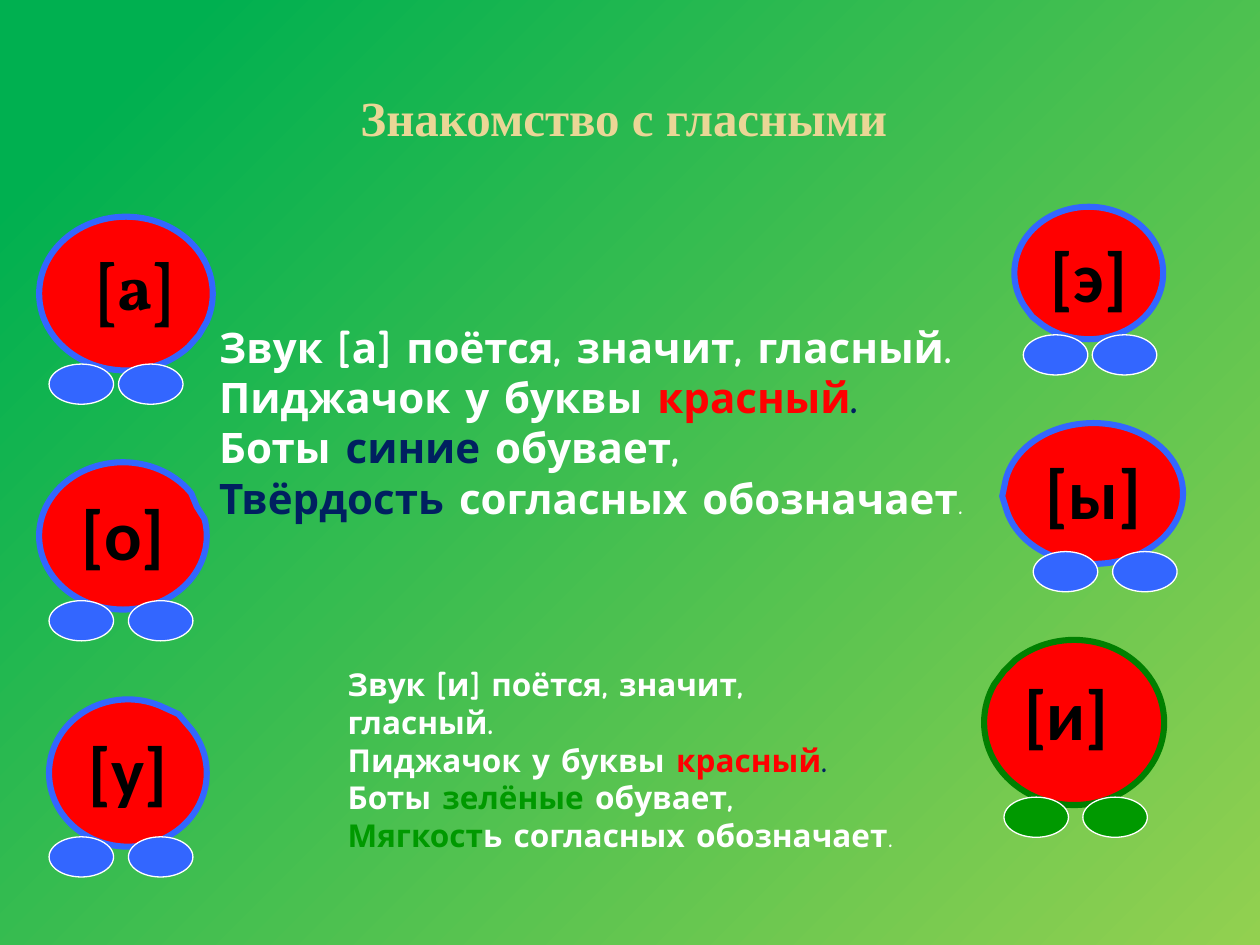
from pptx import Presentation
from pptx.dml.color import RGBColor
from pptx.enum.shapes import MSO_SHAPE as SHAPE
from pptx.enum.text import MSO_ANCHOR as ANCHOR, PP_ALIGN as ALIGN
from pptx.util import Cm, Pt

WHITE, RED, NAVY = "FFFFFF", "FF0000", "002060"
BLUE, GREEN, DARK_GREEN = "3366FF", "009900", "008000"


def rgb(code):
    return RGBColor.from_string(code)


def add_run(p, text, font, size, color, bold=True):
    r = p.add_run()
    r.text = text
    r.font.name, r.font.size, r.font.bold = font, Pt(size), bold
    r.font.color.rgb = rgb(color)


prs = Presentation()
prs.slide_width, prs.slide_height = Cm(25.4), Cm(19.05)
s = prs.slides.add_slide(prs.slide_layouts[6])

bg = s.background.fill
bg.gradient()
bg.gradient_angle = 315
for stop, pos, color in zip(bg.gradient_stops, (0.09, 1), ("00B050", "92D050")):
    stop.position = pos
    stop.color.rgb = rgb(color)

# Title
tf = s.shapes.add_textbox(Cm(1.27), Cm(0.76), Cm(22.86), Cm(3.18)).text_frame
tf.word_wrap = True
tf.vertical_anchor = ANCHOR.MIDDLE
p = tf.paragraphs[0]
p.alignment = ALIGN.CENTER
add_run(p, "Знакомство с гласными ", "Times New Roman", 28, "EAD696")

# Letters: text, font, size, box in cm, callout tip, outline,
# boot colour, x of both boots, y of boots
letters = [
    ("[а]", "Vollkorn", 37, (0.79, 4.37, 3.5, 3.1), (0.42, 0.27), BLUE, BLUE, (0.99, 2.39), 7.34),
    ("[о]", "Calibri", 40, (0.79, 9.32, 3.38, 2.97), (0.44, -0.2), BLUE, BLUE, (0.99, 2.59), 12.11),
    ("[у] ", "Calibri", 40, (0.99, 14.1, 3.18, 2.97), (0.32, -0.4), BLUE, BLUE, (0.99, 2.59), 16.87),
    ("[э] ", "Calibri", 40, (20.45, 4.17, 3, 2.67), (-0.38, 0.33), BLUE, BLUE, (20.63, 22.02), 6.75),
    ("[ы] ", "Calibri", 40, (20.24, 8.53, 3.61, 2.84), (-0.51, 0.02), BLUE, BLUE, (20.83, 22.43), 11.12),
    ("[и] ", "Calibri", 40, (19.84, 12.9, 3.63, 3.33), (-0.39, -0.31), DARK_GREEN, GREEN, (20.24, 21.83), 16.07),
]
for text, font, size, box, tip, outline, boot, boot_xs, boot_y in letters:
    sp = s.shapes.add_shape(SHAPE.OVAL_CALLOUT, *map(Cm, box))
    sp.shadow.inherit = False
    sp.adjustments[0], sp.adjustments[1] = tip
    sp.fill.solid()
    sp.fill.fore_color.rgb = rgb(RED)
    sp.line.color.rgb = rgb(outline)
    sp.line.width = Pt(3.5)
    tf = sp.text_frame
    tf.word_wrap = True
    tf.vertical_anchor = ANCHOR.TOP
    if text == "[а]":
        tf.margin_left = Cm(0.63)
    p = tf.paragraphs[0]
    p.alignment = ALIGN.CENTER
    add_run(p, text, font, size, "000000")

    for x in boot_xs:
        sp = s.shapes.add_shape(SHAPE.OVAL, Cm(x), Cm(boot_y), Cm(1.3), Cm(0.81))
        sp.shadow.inherit = False
        sp.fill.solid()
        sp.fill.fore_color.rgb = rgb(boot)
        sp.line.color.rgb = rgb(WHITE)
        sp.line.width = Pt(0.75)

# Verses: box in cm, text size, size of the last full stop, sound, and the
# runs of the last two lines
verses = [
    ((4.17, 6.35, 15.9, 4.37), 24, 18, "а",
     [("Боты", WHITE), (" синие ", NAVY), ("обувает,", WHITE)],
     [("Твёрдость ", NAVY), ("согласных обозначает", WHITE)]),
    ((6.76, 13.28, 11.53, 3.33), 18, 18, "и",
     [("Боты ", WHITE), ("зелёные ", GREEN), ("обувает,", WHITE)],
     [("Мягкост", GREEN), ("ь согласных обозначает", WHITE)]),
]
for box, size, stop_size, sound, boots, ending in verses:
    tf = s.shapes.add_textbox(*map(Cm, box)).text_frame
    tf.word_wrap = True
    lines = [
        [(f"Звук [{sound}] поётся, значит, гласный.", WHITE)],
        [("Пиджачок у буквы ", WHITE), ("красный", RED), (".", NAVY)],
        boots,
        ending,
    ]
    for i, line in enumerate(lines):
        p = tf.add_paragraph() if i else tf.paragraphs[0]
        for text, color in line:
            add_run(p, text, "Comic Neue", size, color)
    add_run(p, ".", "Comic Neue", stop_size, WHITE, bold=False)

prs.save("out.pptx")
